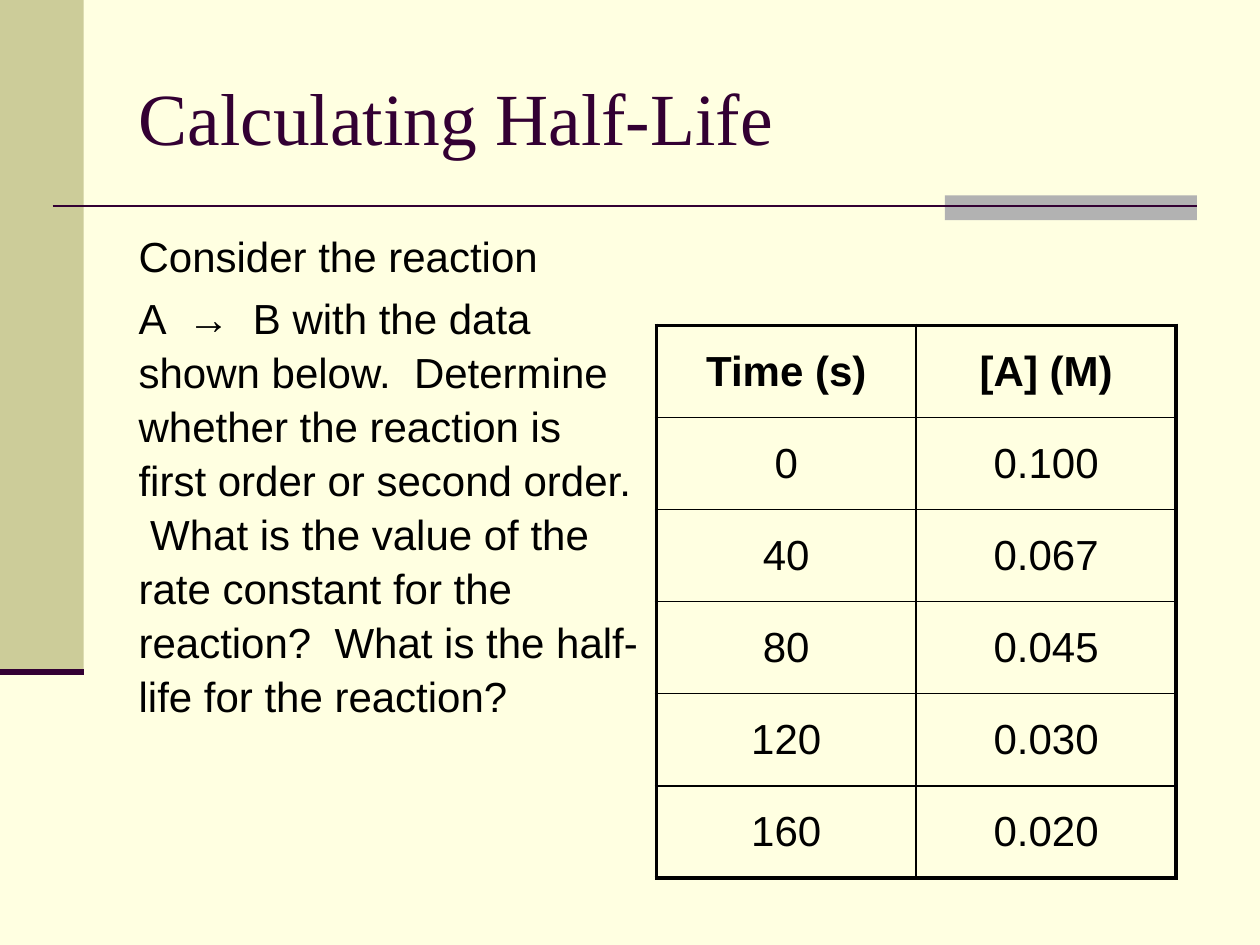
from lxml.etree import SubElement
from pptx import Presentation
from pptx.dml.color import RGBColor
from pptx.enum.shapes import MSO_CONNECTOR as Connector, MSO_SHAPE as Shape
from pptx.enum.text import MSO_ANCHOR as Anchor, MSO_AUTO_SIZE as AutoSize, PP_ALIGN as Align
from pptx.oxml import parse_xml
from pptx.oxml.ns import nsdecls, qn
from pptx.util import Cm, Pt

CREAM = RGBColor(0xFF, 0xFF, 0xE1)
OLIVE = RGBColor(0xCC, 0xCC, 0x99)
GREY = RGBColor(0xB2, 0xB2, 0xB2)
PLUM = RGBColor(0x33, 0x00, 0x33)
BLACK = RGBColor(0x00, 0x00, 0x00)

THIN, THICK = 1, 2.25  # table border widths in points

QUESTION = [
    "Consider the reaction",
    "A  →  B with the data shown below.  Determine whether the reaction is "
    "first order or second order.  What is the value of the rate constant for "
    "the reaction?  What is the half-life for the reaction?",
]
DATA = [
    ("Time (s)", "[A] (M)"),
    ("0", "0.100"),
    ("40", "0.067"),
    ("80", "0.045"),
    ("120", "0.030"),
    ("160", "0.020"),
]


def add_block(slide, left, top, width, height, color):
    block = slide.shapes.add_shape(Shape.RECTANGLE, Cm(left), Cm(top), Cm(width), Cm(height))
    block.shadow.inherit = False
    block.fill.solid()
    block.fill.fore_color.rgb = color
    block.line.fill.background()


def add_rule(slide, left, right, y, weight):
    rule = slide.shapes.add_connector(Connector.STRAIGHT, Cm(left), Cm(y), Cm(right), Cm(y))
    rule.line.color.rgb = PLUM
    rule.line.width = Pt(weight)
    SubElement(rule._element.spPr, qn("a:effectLst"))


def add_text(para, text, size, font, color, bold=False):
    span = para.add_run()
    span.text = text
    span.font.size = Pt(size)
    span.font.name = font
    span.font.color.rgb = color
    span.font.bold = bold


def place(box, left, top, width, height, anchor):
    box.left, box.top, box.width, box.height = Cm(left), Cm(top), Cm(width), Cm(height)
    frame = box.text_frame
    frame.word_wrap = True
    frame.auto_size = AutoSize.NONE
    frame.vertical_anchor = anchor
    return frame


def fill_title(box, text):
    frame = place(box, 2.54, 0.76, 21.59, 3.18, Anchor.MIDDLE)
    para = frame.paragraphs[0]
    para.alignment = Align.LEFT
    add_text(para, text, 42, "Times New Roman", PLUM)


def fill_body(box, texts):
    frame = place(box, 2.54, 4.45, 10.6, 12.57, Anchor.TOP)
    for index, text in enumerate(texts):
        para = frame.add_paragraph() if index else frame.paragraphs[0]
        para.alignment = Align.LEFT
        para.space_before = Pt(4.8)
        para.line_spacing = 1.07
        add_text(para, text, 24, "Arial", BLACK)
        # Plain paragraph: no bullet and no hanging indent
        props = para._p.get_or_add_pPr()
        props.set("marL", "0")
        props.set("indent", "0")
        SubElement(props, qn("a:buNone"))


def set_borders(cell, **widths):
    props = cell._tc.get_or_add_tcPr()
    for index, (side, width) in enumerate(widths.items()):
        props.insert(index, parse_xml(
            f'<a:ln{side} {nsdecls("a")} w="{Pt(width)}"><a:solidFill>'
            f'<a:srgbClr val="{BLACK}"/></a:solidFill></a:ln{side}>'))


def add_data_table(slide, rows):
    last_row, last_col = len(rows) - 1, len(rows[0]) - 1
    frame = slide.shapes.add_table(last_row + 1, last_col + 1,
                                   Cm(13.23), Cm(6.56), Cm(10.48), Cm(11.14))
    table = frame.table
    table.first_row = table.horz_banding = False
    for r, row in enumerate(rows):
        for c, text in enumerate(row):
            cell = table.cell(r, c)
            cell.fill.background()
            cell.vertical_anchor = Anchor.MIDDLE
            para = cell.text_frame.paragraphs[0]
            para.alignment = Align.CENTER
            para.space_before = Pt(4.8)
            add_text(para, text, 24, "Arial", BLACK, bold=r == 0)
            # Thick outer frame, thin inner grid
            set_borders(cell,
                        L=THICK if c == 0 else THIN,
                        R=THICK if c == last_col else THIN,
                        T=THICK if r == 0 else THIN,
                        B=THICK if r == last_row else THIN)


def main():
    deck = Presentation()
    deck.slide_width, deck.slide_height = Cm(25.4), Cm(19.05)
    slide = deck.slides.add_slide(deck.slide_layouts[1])
    slide.background.fill.solid()
    slide.background.fill.fore_color.rgb = CREAM

    # Side band, grey accent and rules
    add_block(slide, 0, 0, 1.69, 13.55, OLIVE)
    add_block(slide, 19.05, 3.94, 5.08, 0.5, GREY)
    add_rule(slide, 1.06, 24.13, 4.15, 1.5)
    add_rule(slide, 0, 1.69, 13.55, 3.5)

    # Title, question and measurements
    fill_title(slide.shapes.title, "Calculating Half-Life")
    fill_body(slide.placeholders[1], QUESTION)
    add_data_table(slide, DATA)

    deck.save("out.pptx")


if __name__ == "__main__":
    main()
